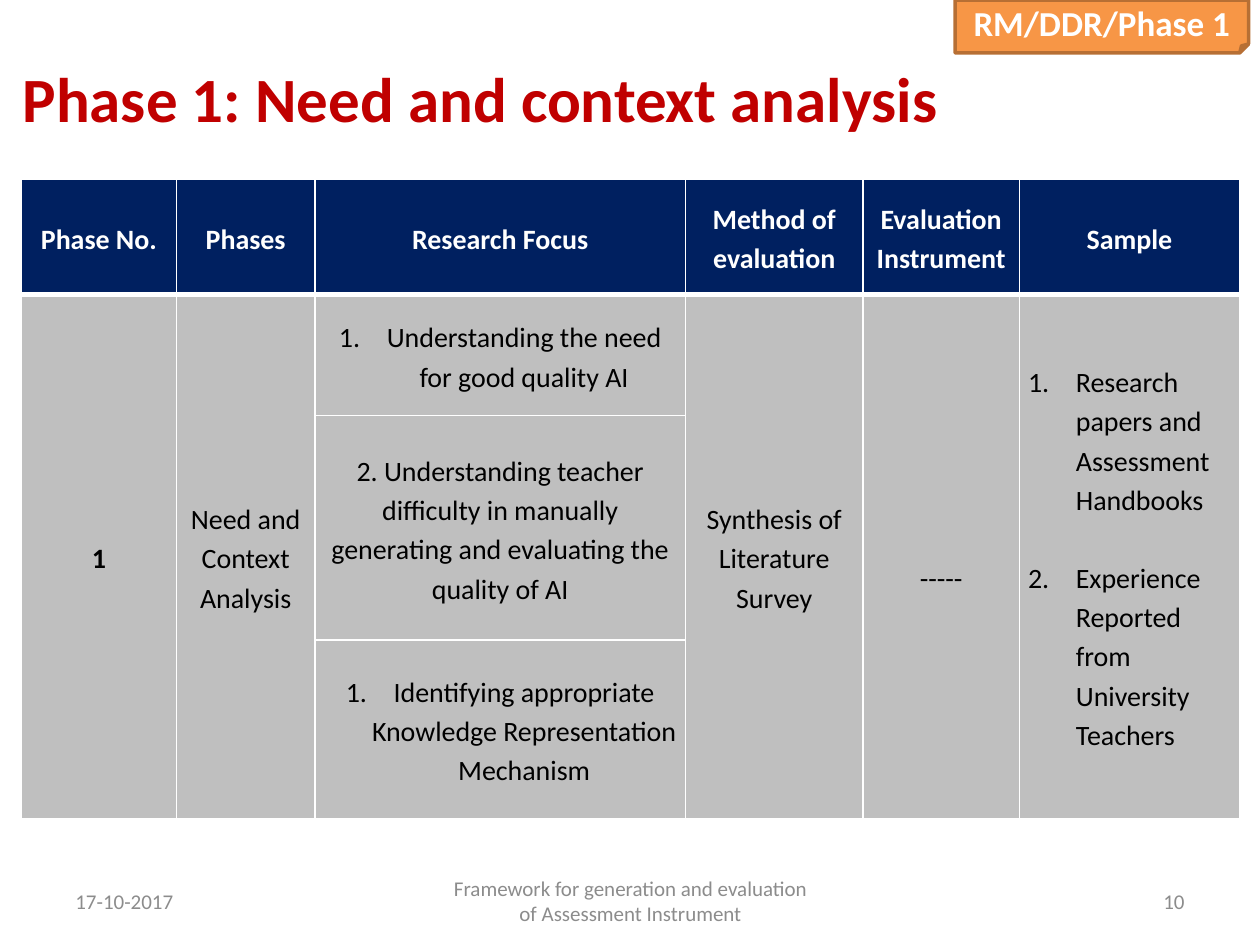
from dataclasses import dataclass

from lxml import etree
from pptx import Presentation
from pptx import util as u
from pptx.dml.color import RGBColor
from pptx.enum import shapes, text
from pptx.oxml import ns

PX = 9144
FACE = "Calibri"
RED = RGBColor(0xC0, 0x00, 0x00)
NAVY = RGBColor(0x00, 0x20, 0x60)
GREY = RGBColor(0xBF, 0xBF, 0xBF)
DIM = RGBColor(0x8C, 0x8C, 0x8C)
ORANGE = RGBColor(0xF7, 0x96, 0x46)
BROWN = RGBColor(0xB7, 0x6F, 0x34)
WHITE = RGBColor(0xFF, 0xFF, 0xFF)
BLACK = RGBColor(0x00, 0x00, 0x00)
LEFT, MID, RIGHT = text.PP_ALIGN.LEFT, text.PP_ALIGN.CENTER, text.PP_ALIGN.RIGHT

COLS = (123, 110, 294, 141, 124, 175)
ROWS = (92, 96, 178, 142)


@dataclass(frozen=True)
class Para:
    words: str
    align: text.PP_ALIGN = MID
    num: int = 0
    gap: int = 0


@dataclass(frozen=True)
class Cell:
    row: int
    col: int
    paras: tuple[Para, ...]
    span: int = 1
    bold: bool = False
    top: int = 0


@dataclass(frozen=True)
class Note:
    left: int
    width: int
    words: str
    align: text.PP_ALIGN


HEADS = (
    ("Phase No.",),
    ("Phases",),
    ("Research Focus",),
    ("Method of evaluation",),
    ("Evaluation", "Instrument"),
    ("Sample",),
)
CELLS = [
    Cell(0, col, tuple(Para(line) for line in lines), bold=True)
    for col, lines in enumerate(HEADS)
] + [
    Cell(1, 0, (Para("1"),), span=3, bold=True),
    Cell(1, 1, (Para("Need and Context Analysis"),), span=3),
    Cell(1, 2, (Para("Understanding the need for good quality AI", num=1),)),
    Cell(2, 2, (Para("2. Understanding teacher difficulty in manually "
                     "generating and evaluating the quality of AI"),)),
    Cell(3, 2, (Para("Identifying appropriate Knowledge Representation "
                     "Mechanism", num=1),)),
    Cell(1, 3, (Para("Synthesis of Literature Survey"),), span=3),
    Cell(1, 4, (Para("-----"),), span=3, top=31),
    Cell(1, 5, (
        Para("Research papers and Assessment Handbooks", LEFT, 1),
        Para("Experience Reported from University Teachers", LEFT, 2, 22),
    ), span=3),
]
NOTES = (
    Note(50, 233, "17-10-2017", LEFT),
    Note(342, 317, "Framework for generation and evaluation of Assessment Instrument", MID),
    Note(717, 233, "10", RIGHT),
)


def box(left: int, top: int, width: int, height: int) -> tuple[int, ...]:
    return tuple(n * PX for n in (left, top, width, height))


def style(para, size: int, color: RGBColor, bold: bool, align: text.PP_ALIGN) -> None:
    para.alignment = align
    font = para.font
    font.name, font.size, font.bold = FACE, u.Pt(size), bold
    font.color.rgb = color


def label(shape, words: str, size: int, color: RGBColor, bold: bool,
          align: text.PP_ALIGN) -> None:
    frame = shape.text_frame
    frame.word_wrap = True
    frame.vertical_anchor = text.MSO_ANCHOR.MIDDLE
    frame.text = words
    style(frame.paragraphs[0], size, color, bold, align)


def number(para, start: int) -> None:
    props = para._p.get_or_add_pPr()
    props.set("marL", str(38 * PX))
    props.set("indent", str(-38 * PX))
    mark = etree.SubElement(props, ns.qn("a:buAutoNum"), type="arabicPeriod")
    if start > 1:
        mark.set("startAt", str(start))


def edge(cell, head: bool, under: bool) -> None:
    props = cell._tc.get_or_add_tcPr()
    wide = {"lnT": under, "lnB": head}
    for side in ("lnL", "lnR", "lnT", "lnB"):
        line = etree.SubElement(props, ns.qn(f"a:{side}"))
        line.set("w", str(u.Pt(3 if wide.get(side) else 1)))
        fill = etree.SubElement(line, ns.qn("a:solidFill"))
        etree.SubElement(fill, ns.qn("a:srgbClr"), val=str(WHITE))


def write(grid, item: Cell) -> None:
    cell = grid.cell(item.row, item.col)
    if item.span > 1:
        cell.merge(grid.cell(item.row + item.span - 1, item.col))
    cell.vertical_anchor = text.MSO_ANCHOR.MIDDLE
    cell.margin_left = cell.margin_right = 7 * PX
    cell.margin_top, cell.margin_bottom = item.top * PX, 0
    frame = cell.text_frame
    frame.text = "\n".join(para.words for para in item.paras)
    for para, data in zip(frame.paragraphs, item.paras):
        if data.num:
            number(para, data.num)
        para.line_spacing = 1.15
        if data.gap:
            para.space_before = u.Pt(data.gap)
        style(para, 16, BLACK if item.row else WHITE, item.bold, data.align)


def table(slide) -> None:
    place = box(17, 142, sum(COLS), sum(ROWS))
    grid = slide.shapes.add_table(len(ROWS), len(COLS), *place).table
    for col, width in zip(grid.columns, COLS):
        col.width = width * PX
    for index, (row, height) in enumerate(zip(grid.rows, ROWS)):
        row.height = height * PX
        for cell in row.cells:
            edge(cell, index == 0, index == 1)
            cell.fill.solid()
            cell.fill.fore_color.rgb = GREY if index else NAVY
    for item in CELLS:
        write(grid, item)


def tag(slide) -> None:
    shape = slide.shapes.add_shape(
        shapes.MSO_SHAPE.FOLDED_CORNER, *box(758, 0, 233, 42))
    shape.shadow.inherit = False
    shape.fill.solid()
    shape.fill.fore_color.rgb = ORANGE
    shape.line.color.rgb = BROWN
    shape.line.width = u.Pt(2)
    label(shape, "RM/DDR/Phase 1", 20, WHITE, True, MID)


def main() -> None:
    deck = Presentation()
    deck.slide_width, deck.slide_height = 1000 * PX, 750 * PX
    slide = deck.slides.add_slide(deck.slide_layouts[5])
    title = slide.shapes.title
    title.left, title.top, title.width, title.height = box(8, 30, 900, 95)
    label(title, "Phase 1: Need and context analysis", 36, RED, True, LEFT)
    table(slide)
    for note in NOTES:
        area = slide.shapes.add_textbox(*box(note.left, 695, note.width, 40))
        label(area, note.words, 12, DIM, False, note.align)
    tag(slide)
    deck.save("out.pptx")


if __name__ == "__main__":
    main()
